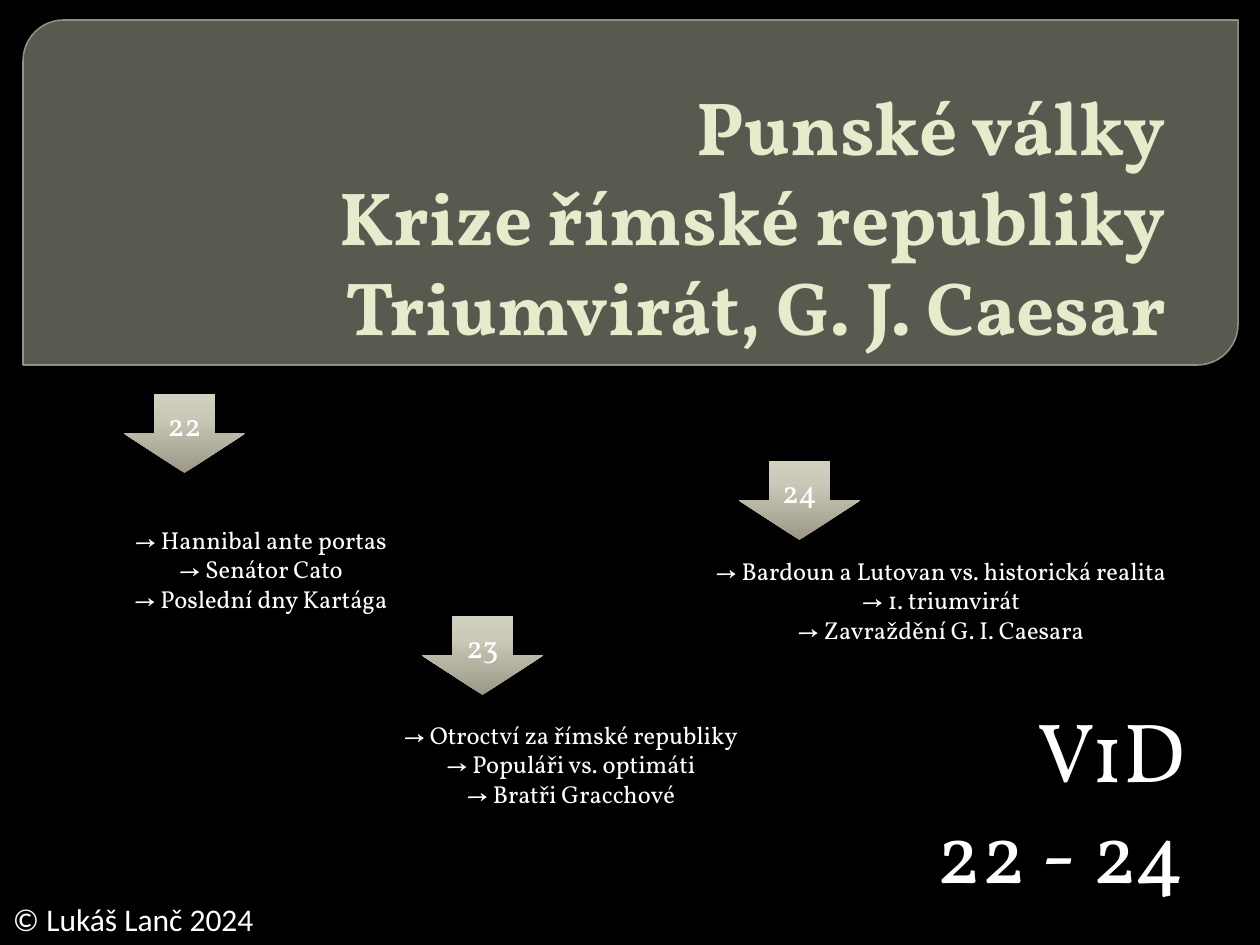
from pptx import Presentation
from pptx.dml.color import RGBColor
from pptx.enum.shapes import MSO_SHAPE as Shape
from pptx.enum.text import MSO_ANCHOR as Anchor, PP_ALIGN as Align
from pptx.oxml import parse_xml
from pptx.oxml.ns import nsdecls
from pptx.util import Pt
from lxml.etree import SubElement

SCALE = 914400 / 126
SERIF, SANS = "Vollkorn", "Calibri"
WHITE, CREAM = "FFFFFF", "E7EACB"


def px(n):
    return round(n * SCALE)


def color(code):
    return RGBColor.from_string(code)


def write(frame, text, size=14, font=SERIF, ink=WHITE, bold=False,
          align=Align.CENTER, anchor=Anchor.TOP, pad=(13, 6, 13, 6)):
    """Each line of text becomes a paragraph; a vertical tab breaks a line."""
    frame.word_wrap = True
    frame.vertical_anchor = anchor
    (frame.margin_left, frame.margin_top,
     frame.margin_right, frame.margin_bottom) = map(px, pad)
    frame.text = text
    for para in frame.paragraphs:
        para.alignment = align
        for run in para.runs:
            run.font.name, run.font.size = font, Pt(size)
            run.font.bold = bold
            run.font.color.rgb = color(ink)


def fade(fill, percent):
    tint = fill._xPr.find(".//{*}srgbClr")
    SubElement(tint, tint.tag.replace("srgbClr", "alpha"),
               val=str(percent * 1000))


class Deck:
    stops = ((0, "9B9887"), (72, "CAC8B7"), (100, "D2D0BF"))

    def __init__(self, slide):
        self.slide = slide
        fill = slide.background.fill
        fill.solid()
        fill.fore_color.rgb = color("000000")

    def shape(self, kind, *box):
        item = self.slide.shapes.add_shape(kind, *map(px, box))
        item.shadow.inherit = False
        return item

    def text(self, box, words, **style):
        item = self.slide.shapes.add_textbox(*map(px, box))
        write(item.text_frame, words, **style)

    def panel(self, *box):
        item = self.shape(Shape.ROUND_2_DIAG_RECTANGLE, *box)
        item.adjustments[0], item.adjustments[1] = 0.118, 0
        item.fill.solid()
        item.fill.fore_color.rgb = color("888B7B")
        fade(item.fill, 65)
        item.line.color.rgb = color("9DA090")
        item.line.width = Pt(0.87)
        fade(item.line.fill, 88)

    def arrow(self, x, y, label):
        item = self.shape(Shape.DOWN_ARROW, x, y, 121, 79)
        item.line.fill.background()
        stops = "".join(f'<a:gs pos="{at * 1000}"><a:srgbClr val="{tone}"/></a:gs>'
                        for at, tone in self.stops)
        grad = parse_xml(f'<a:gradFill {nsdecls("a")}><a:gsLst>{stops}</a:gsLst>'
                         '<a:lin ang="16200000" scaled="0"/></a:gradFill>')
        props = item.element.spPr
        props.find("{*}prstGeom").addnext(grad)
        shade = parse_xml(
            f'<a:outerShdw {nsdecls("a")} blurRad="{Pt(4)}" dist="{Pt(3)}" '
            'dir="5400000" rotWithShape="0"><a:srgbClr val="000000">'
            '<a:alpha val="43000"/></a:srgbClr></a:outerShdw>')
        props.find("{*}effectLst").append(shade)
        write(item.text_frame, label, size=18, anchor=Anchor.MIDDLE,
              pad=(6, 6, 6, 6))

    def topics(self, x, y, *names):
        self.text((x, y, 562, 102), "\n".join(f"→ {name}" for name in names))


def main():
    prs = Presentation()
    prs.slide_width, prs.slide_height = px(1260), px(945)
    deck = Deck(prs.slides.add_slide(prs.slide_layouts[6]))

    # Title panel
    deck.panel(23, 20, 1215, 345)
    deck.text((25, 52, 1173, 305),
              "Punské války\vKrize římské republiky\vTriumvirát, G. J. Caesar",
              size=43, ink=CREAM, bold=True, align=Align.RIGHT,
              anchor=Anchor.BOTTOM, pad=(6, 6, 32, 6))

    # Credit and course code
    deck.text((0, 894, 323, 50), "© Lukáš Lanč 2024",
              size=18, font=SANS, align=Align.LEFT)
    deck.text((315, 693, 904, 242), "V1D\n22 - 24", size=48,
              align=Align.RIGHT, pad=(6, 6, 34, 6))

    # Lessons: an arrow with its number, and the topics below
    deck.arrow(124, 394, "22")
    deck.topics(-20, 519, "Hannibal ante portas", "Senátor Cato",
                "Poslední dny Kartága")
    deck.arrow(422, 616, "23")
    deck.topics(290, 714, "Otroctví za římské republiky",
                "Populáři vs. optimáti", "Bratři Gracchové")
    deck.arrow(739, 461, "24")
    deck.topics(660, 550, "Bardoun a Lutovan vs. historická realita",
                "1. triumvirát", "Zavraždění G. I. Caesara")

    prs.save("out.pptx")


if __name__ == "__main__":
    main()
